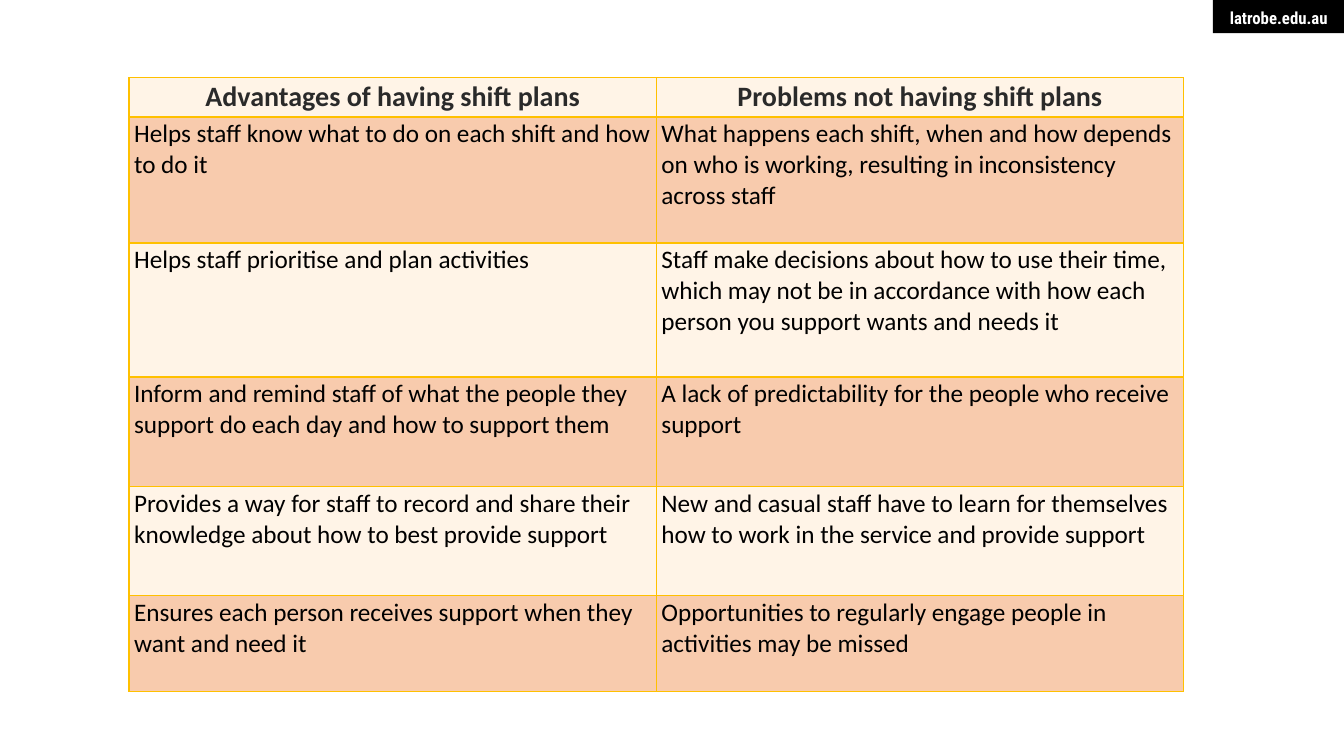
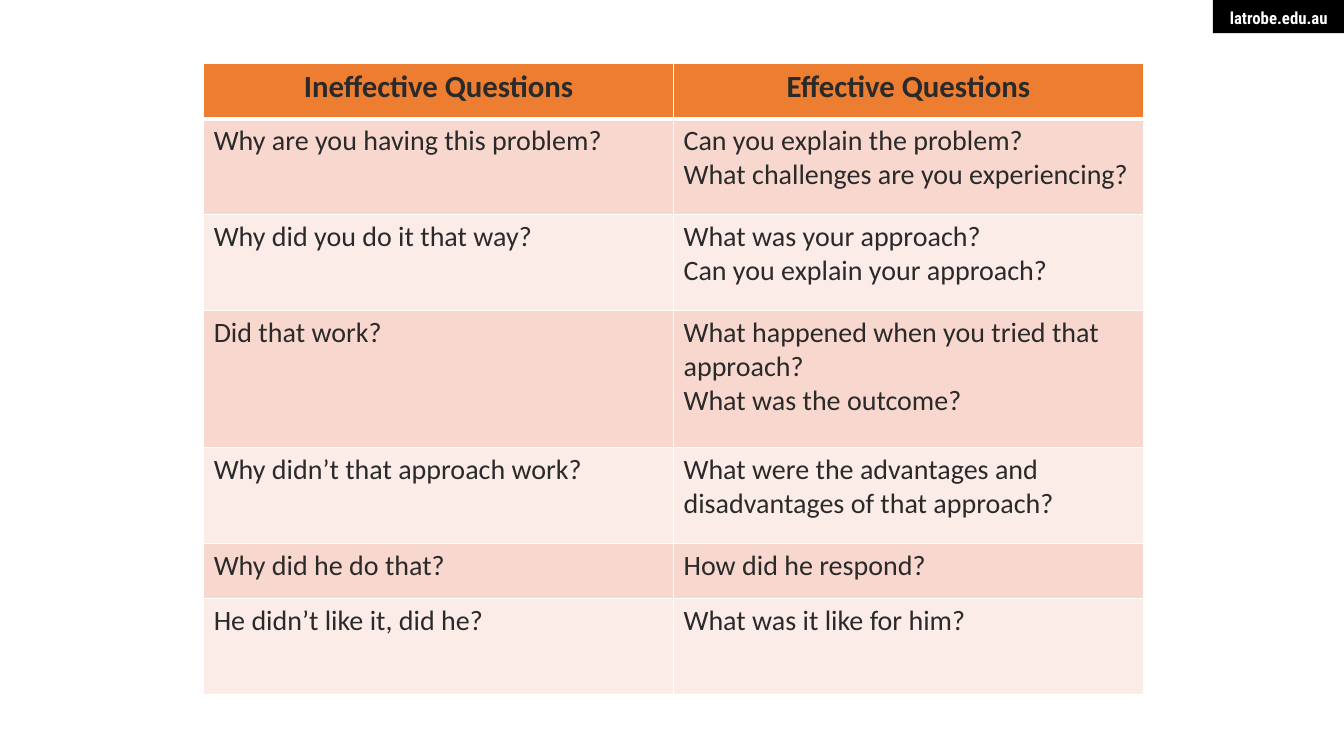
"""Build two comparison-table slides on shift plans and effective questions."""
from lxml import etree
from pptx import Presentation
from pptx.dml.color import RGBColor
from pptx.enum.shapes import MSO_SHAPE
from pptx.enum.text import PP_ALIGN
from pptx.oxml.ns import qn
from pptx.util import Inches, Pt

RECTANGLE = MSO_SHAPE.RECTANGLE
CENTER, LEFT, RIGHT = PP_ALIGN.CENTER, PP_ALIGN.LEFT, PP_ALIGN.RIGHT

BLACK = RGBColor(0x00, 0x00, 0x00)
WHITE = RGBColor(0xFF, 0xFF, 0xFF)
CHARCOAL = RGBColor(0x2A, 0x2A, 0x2A)
GOLD = RGBColor(0xFF, 0xC0, 0x00)
CREAM = RGBColor(0xFF, 0xF4, 0xE7)
PEACH = RGBColor(0xF8, 0xCB, 0xAD)
ORANGE = RGBColor(0xED, 0x7D, 0x31)
ROSE = RGBColor(0xF8, 0xD7, 0xCE)
PALE_ROSE = RGBColor(0xFC, 0xEC, 0xE8)

TABLE_FONT, BAND_FONT = "Calibri", "Roboto Condensed"
BLANK_LAYOUT = 6

COMPARISONS = [
    {
        "left": 1.28, "top": 0.77, "width": 10.46,
        "row_heights": [0.39, 1.25, 1.33, 1.09, 1.08, 0.95],
        "margins": (0.05, 0.02),
        "sizes": (20, 18),
        "body_color": BLACK,
        "fills": (CREAM, PEACH, CREAM),
        "border": GOLD, "header_rule": 1,
        "rows": [
            ("Advantages of having shift plans", "Problems not having shift plans"),
            ("Helps staff know what to do on each shift and how to do it",
             "What happens each shift, when and how depends on who is working, "
             "resulting in inconsistency across staff"),
            ("Helps staff prioritise and plan activities",
             "Staff make decisions about how to use their time, which may not be in "
             "accordance with how each person you support wants and needs it"),
            ("Inform and remind staff of what the people they support do each day "
             "and how to support them",
             "A lack of predictability for the people who receive support"),
            ("Provides a way for staff to record and share their knowledge about "
             "how to best provide support",
             "New and casual staff have to learn for themselves how to work in the "
             "service and provide support"),
            ("Ensures each person receives support when they want and need it",
             "Opportunities to regularly engage people in activities may be missed"),
        ],
    },
    {
        "left": 2.02, "top": 0.63, "width": 9.32,
        "row_heights": [0.55, 0.95, 0.95, 1.36, 0.95, 0.55, 0.95],
        "margins": (0.1, 0.05),
        "sizes": (22, 20),
        "body_color": CHARCOAL,
        "fills": (ORANGE, ROSE, PALE_ROSE),
        "border": WHITE, "header_rule": 3,
        "rows": [
            ("Ineffective Questions", "Effective Questions"),
            ("Why are you having this problem?",
             "Can you explain the problem?\vWhat challenges are you experiencing?"),
            ("Why did you do it that way?",
             "What was your approach?\vCan you explain your approach?"),
            ("Did that work?",
             "What happened when you tried that approach?\vWhat was the outcome?"),
            ("Why didn’t that approach work?",
             "What were the advantages and disadvantages of that approach?"),
            ("Why did he do that?", "How did he respond?"),
            ("He didn’t like it, did he?", "What was it like for him?"),
        ],
    },
]


def write_text(paragraph, text, alignment, font_name, size, bold, color):
    """Fill a paragraph and format it as a whole."""
    paragraph.text = text
    paragraph.alignment = alignment
    paragraph.font.name = font_name
    paragraph.font.size = Pt(size)
    paragraph.font.bold = bold
    paragraph.font.color.rgb = color


def set_borders(cell, color, top, bottom):
    """Draw the four cell borders; top and bottom are widths in points."""
    properties = cell._tc.get_or_add_tcPr()
    widths = {"a:lnL": 1, "a:lnR": 1, "a:lnT": top, "a:lnB": bottom}
    for position, (tag, width) in enumerate(widths.items()):
        line = etree.Element(qn(tag), w=str(Pt(width)))
        fill = etree.SubElement(line, qn("a:solidFill"))
        etree.SubElement(fill, qn("a:srgbClr"), val=str(color))
        properties.insert(position, line)


presentation = Presentation()
presentation.slide_width = Inches(13.33)
presentation.slide_height = Inches(7.5)
layout = presentation.slide_layouts[BLANK_LAYOUT]
band_width, band_height = Inches(1.3), Inches(0.33)

for comparison in COMPARISONS:
    slide = presentation.slides.add_slide(layout)

    band = slide.shapes.add_shape(
        RECTANGLE, presentation.slide_width - band_width, 0, band_width, band_height)
    band.shadow.inherit = False
    band.fill.solid()
    band.fill.fore_color.rgb = BLACK
    band.line.fill.background()
    frame = band.text_frame
    frame.word_wrap = False
    frame.margin_left = frame.margin_right = Inches(0.16)
    frame.margin_top, frame.margin_bottom = Inches(0.08), Inches(0.05)
    write_text(frame.paragraphs[0], "latrobe.edu.au", RIGHT, BAND_FONT, 12, True, WHITE)

    rows, heights = comparison["rows"], comparison["row_heights"]
    table = slide.shapes.add_table(
        len(rows), 2, Inches(comparison["left"]), Inches(comparison["top"]),
        Inches(comparison["width"]), Inches(sum(heights))).table
    table.horz_banding = False
    header_fill, *body_fills = comparison["fills"]
    header_size, body_size = comparison["sizes"]
    margin_x, margin_y = comparison["margins"]
    header_rule = comparison["header_rule"]

    for row_index, texts in enumerate(rows):
        table.rows[row_index].height = Inches(heights[row_index])
        is_header = row_index == 0
        for column_index, text in enumerate(texts):
            cell = table.cell(row_index, column_index)
            cell.margin_left = cell.margin_right = Inches(margin_x)
            cell.margin_top = cell.margin_bottom = Inches(margin_y)
            cell.fill.solid()
            cell.fill.fore_color.rgb = (
                header_fill if is_header else body_fills[(row_index - 1) % 2])
            set_borders(cell, comparison["border"],
                        top=header_rule if row_index == 1 else 1,
                        bottom=header_rule if is_header else 1)
            write_text(cell.text_frame.paragraphs[0], text,
                       CENTER if is_header else LEFT, TABLE_FONT,
                       header_size if is_header else body_size, is_header,
                       CHARCOAL if is_header else comparison["body_color"])

presentation.save("out.pptx")
